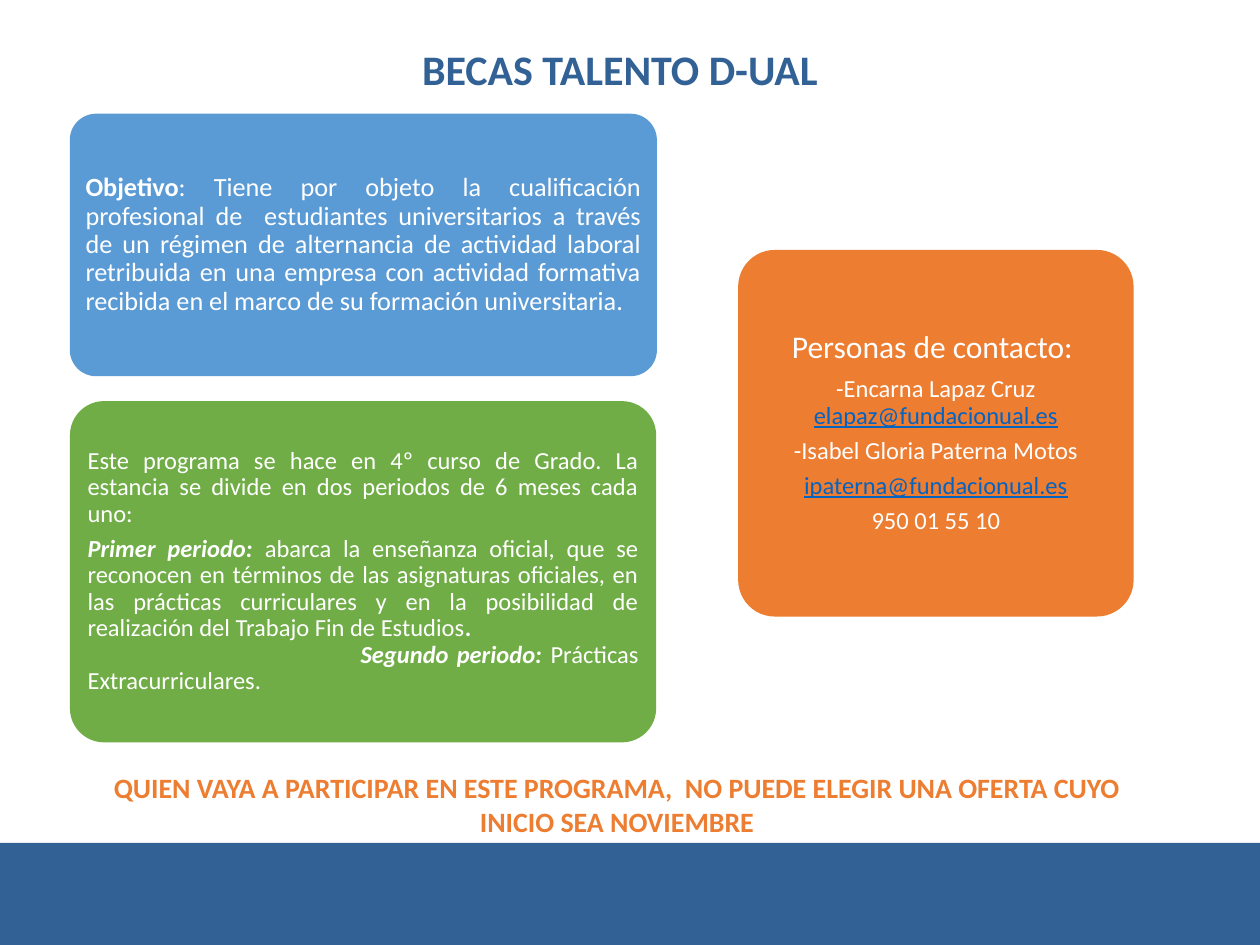
import pptx
import pptx.util
import pptx.dml.color
import pptx.enum.shapes
import pptx.enum.text

Pt = pptx.util.Pt
SHAPE = pptx.enum.shapes.MSO_SHAPE
ALIGN = pptx.enum.text.PP_ALIGN
ANCHOR = pptx.enum.text.MSO_ANCHOR

HUES = {"navy": "326195", "blue": "5B9BD5", "green": "70AD47",
        "orange": "ED7D31", "white": "FFFFFF", "mail": "0563C1"}
BOLD = {"bold": True}
LEAD = {"bold": True, "italic": True}
MAIL = {"hue": "mail", "underline": True}


def tint(hue):
    return pptx.dml.color.RGBColor.from_string(HUES[hue])


class Deck:
    """Holds the text style and the current slide."""

    def __init__(self, wide, high, face):
        self.show = pptx.Presentation()
        self.show.slide_width, self.show.slide_height = Pt(wide), Pt(high)
        self.slide = self.show.slides.add_slide(self.show.slide_layouts[6])
        self.base = {"name": face, "hue": "white"}

    def block(self, kind, box, hue):
        shape = self.slide.shapes.add_shape(kind, *map(Pt, box))
        shape.shadow.inherit = False
        shape.fill.solid()
        shape.fill.fore_color.rgb = tint(hue)
        shape.line.fill.background()
        return shape

    def text(self, box, paras, pads, anchor, **base):
        frame = self.slide.shapes.add_textbox(*map(Pt, box)).text_frame
        form = {"word_wrap": True, "vertical_anchor": anchor,
                "margin_left": Pt(pads[0]), "margin_right": Pt(pads[0]),
                "margin_top": Pt(pads[1]), "margin_bottom": Pt(pads[1])}
        for key, val in form.items():
            setattr(frame, key, val)
        for num, (runs, look) in enumerate(paras):
            para = frame.add_paragraph() if num else frame.paragraphs[0]
            self.para(para, runs, look, base)

    def para(self, para, runs, look, base):
        look = dict(look)
        dent = look.pop("indent", 0)
        if dent:
            para._p.get_or_add_pPr().set("indent", str(Pt(dent)))
        size = look.pop("size", base["size"])
        for key, val in look.items():
            setattr(para, key, val)
        for words, extra in runs:
            run = para.add_run()
            run.text = words
            form = {**self.base, **base, "size": Pt(size), **extra}
            run.font.color.rgb = tint(form.pop("hue"))
            for key, val in form.items():
                setattr(run.font, key, val)

    def card(self, box, hue, paras, pad, size):
        left, top, wide, high = box
        shape = self.block(SHAPE.ROUNDED_RECTANGLE, box, hue)
        shape.adjustments[0] = 0.1
        # Text keeps clear of the rounded corners
        gap = 0.03 * min(wide, high)
        inner = (left + gap, top + gap, wide - 2 * gap, high - 2 * gap)
        self.text(inner, paras, (pad, pad), ANCHOR.MIDDLE, size=size)


def main():
    deck = Deck(720, 540, "Calibri")
    full = {"alignment": ALIGN.JUSTIFY, "line_spacing": 0.9}
    mid = {"alignment": ALIGN.CENTER, "line_spacing": 0.9}
    step = {"space_before": Pt(4.9)}

    # Footer band and title
    deck.block(SHAPE.RECTANGLE, (0, 481.7, 720, 58.3), "navy")
    deck.text((46, 22.3, 616.4, 35.3), [([("BECAS TALENTO D-UAL", BOLD)], mid)],
              (7.2, 3.6), ANCHOR.BOTTOM, size=24, hue="navy")

    # Goal
    goal = [([("Objetivo", BOLD),
              (": Tiene por objeto la cualificación profesional de  estudiantes "
               "universitarios a través de un régimen de alternancia de actividad "
               "laboral retribuida en una empresa con actividad formativa recibida "
               "en el marco de su formación universitaria.", {})], full)]
    deck.card((39.9, 65, 335.5, 150), "blue", goal, 4.5, 15)

    # Two terms
    terms = [
        ([("Este programa se hace en 4º curso de Grado. La estancia se divide en "
           "dos periodos de 6 meses cada uno:", {})], full),
        ([("Primer periodo: ", LEAD),
          ("abarca la enseñanza oficial, que se reconocen en términos de las "
           "asignaturas oficiales, en las prácticas curriculares y en la "
           "posibilidad de realización del Trabajo Fin de Estudios", {}),
          (".", BOLD)], {**full, **step}),
        ([("Segundo periodo: ", LEAD), ("Prácticas Extracurriculares.", {})],
         {**full, "indent": 156}),
    ]
    deck.card((40, 229.2, 335, 195), "green", terms, 4.2, 14)

    # Contacts
    folk = [
        ([("Personas de contacto: ", {})], {**mid, "size": 18}),
        ([("-Encarna Lapaz Cruz ", {}), ("elapaz@fundacionual.es", MAIL)],
         {**mid, "space_before": Pt(6.3)}),
        ([("-Isabel Gloria Paterna Motos", {})], {**mid, **step}),
        ([("ipaterna@fundacionual.es", MAIL)], {**mid, **step}),
        ([("950 01 55 10", {})], {**mid, **step}),
    ]
    deck.card((421.8, 142.8, 226, 209.5), "orange", folk, 5.4, 14)

    # Warning
    note = ("QUIEN VAYA A PARTICIPAR EN ESTE PROGRAMA,  NO PUEDE ELEGIR UNA "
            "OFERTA CUYO INICIO SEA NOVIEMBRE")
    deck.text((57.4, 437, 590.4, 46), [([(note, BOLD)], {"alignment": ALIGN.CENTER})],
              (7.2, 3.6), ANCHOR.TOP, size=16, hue="orange")

    deck.show.save("out.pptx")


if __name__ == "__main__":
    main()
